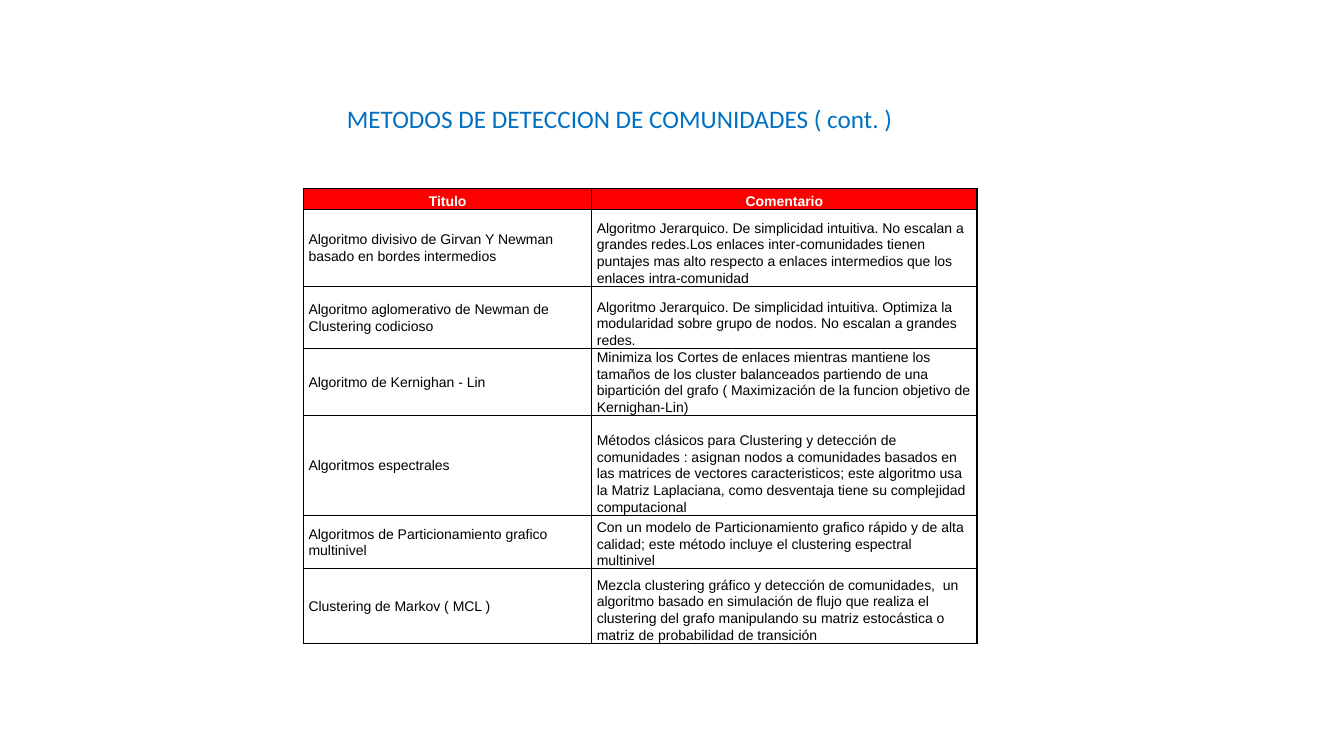
from dataclasses import dataclass

from lxml import etree
from pptx import Presentation
from pptx.dml.color import RGBColor
from pptx.enum.text import MSO_ANCHOR, MSO_AUTO_SIZE, PP_ALIGN
from pptx.oxml.ns import qn
from pptx.util import Inches, Pt

LEFT, CENTER = PP_ALIGN.LEFT, PP_ALIGN.CENTER
TOP, MIDDLE, BOTTOM = MSO_ANCHOR.TOP, MSO_ANCHOR.MIDDLE, MSO_ANCHOR.BOTTOM
NO_AUTOFIT = MSO_AUTO_SIZE.NONE
TITLE_ONLY = 5


@dataclass(frozen=True)
class Theme:
    title_font: str = "Calibri"
    body_font: str = "Arial"
    title_size: int = 18
    body_size: int = 10
    title: str = "0070C0"
    header: str = "FF0000"
    paper: str = "FFFFFF"
    ink: str = "000000"
    border_width: float = 1
    line_spacing: float = 1.07


THEME = Theme()
SLIDE_W, SLIDE_H = 13.33, 7.5
TITLE_BOX = (3.34, 0.97, 6.93, 0.4)
TABLE_LEFT, TABLE_TOP = 3.01, 1.87
COLUMNS = (2.86, 3.82)
ROWS = (0.21, 0.76, 0.62, 0.65, 0.99, 0.53, 0.74)
CELL_INSET = 0.05

TITLE = "METODOS DE DETECCION DE COMUNIDADES ( cont. )"
HEADERS = ("Titulo", "Comentario")
METHODS = (
    ("Algoritmo divisivo de Girvan Y Newman basado en bordes intermedios",
     "Algoritmo Jerarquico. De simplicidad intuitiva. No escalan a grandes "
     "redes.Los enlaces inter-comunidades tienen puntajes mas alto respecto a "
     "enlaces intermedios que los enlaces intra-comunidad"),
    ("Algoritmo aglomerativo de Newman de Clustering codicioso",
     "Algoritmo Jerarquico. De simplicidad intuitiva. Optimiza la modularidad "
     "sobre grupo de nodos. No escalan a grandes redes."),
    ("Algoritmo de Kernighan - Lin",
     "Minimiza los Cortes de enlaces mientras mantiene los tamaños de los "
     "cluster balanceados partiendo de una bipartición del grafo ( Maximización "
     "de la funcion objetivo de Kernighan-Lin)"),
    ("Algoritmos espectrales",
     "Métodos clásicos para Clustering y detección de comunidades : asignan "
     "nodos a comunidades basados en las matrices de vectores caracteristicos; "
     "este algoritmo usa la Matriz Laplaciana, como desventaja tiene su "
     "complejidad computacional"),
    ("Algoritmos de Particionamiento grafico multinivel",
     "Con un modelo de Particionamiento grafico rápido y de alta calidad; este "
     "método incluye el clustering espectral multinivel"),
    ("Clustering de Markov ( MCL )",
     "Mezcla clustering gráfico y detección de comunidades,  un algoritmo basado "
     "en simulación de flujo que realiza el clustering del grafo manipulando su "
     "matriz estocástica o matriz de probabilidad de transición"),
)


def write(tf, text, *, font=THEME.body_font, size=THEME.body_size,
          color=THEME.ink, bold=False, align=LEFT, spacing=THEME.line_spacing):
    p = tf.paragraphs[0]
    p.alignment = align
    p.line_spacing = spacing
    r = p.add_run()
    r.text = text
    r.font.name = font
    r.font.size = Pt(size)
    r.font.bold = bold
    r.font.color.rgb = RGBColor.from_string(color)


def add_title(s):
    sp = s.shapes.title
    sp.left, sp.top, sp.width, sp.height = map(Inches, TITLE_BOX)
    tf = sp.text_frame
    tf.word_wrap = True
    tf.auto_size = NO_AUTOFIT
    tf.vertical_anchor = TOP
    write(tf, TITLE, font=THEME.title_font, size=THEME.title_size,
          color=THEME.title, spacing=1.0)


def set_borders(cell):
    tc_pr = cell._tc.get_or_add_tcPr()
    for side in ("lnL", "lnR", "lnT", "lnB"):
        ln = etree.SubElement(tc_pr, qn(f"a:{side}"),
                              w=str(Pt(THEME.border_width)))
        fill = etree.SubElement(ln, qn("a:solidFill"))
        etree.SubElement(fill, qn("a:srgbClr"), val=THEME.ink)


def format_cell(cell, fill, anchor):
    cell.margin_left = cell.margin_right = Inches(CELL_INSET)
    cell.margin_top = cell.margin_bottom = 0
    cell.vertical_anchor = anchor
    set_borders(cell)
    cell.fill.solid()
    cell.fill.fore_color.rgb = RGBColor.from_string(fill)


def add_methods_table(s):
    frame = s.shapes.add_table(
        len(ROWS), len(COLUMNS), Inches(TABLE_LEFT), Inches(TABLE_TOP),
        Inches(sum(COLUMNS)), Inches(sum(ROWS)))
    table = frame.table
    table.first_row = table.horz_banding = False
    for column, width in zip(table.columns, COLUMNS):
        column.width = Inches(width)
    for row, height in zip(table.rows, ROWS):
        row.height = Inches(height)

    for col, header in enumerate(HEADERS):
        cell = table.cell(0, col)
        format_cell(cell, THEME.header, BOTTOM)
        write(cell.text_frame, header, color=THEME.paper, bold=True, align=CENTER)
    for row, method in enumerate(METHODS, start=1):
        for col, (text, anchor) in enumerate(zip(method, (MIDDLE, BOTTOM))):
            cell = table.cell(row, col)
            format_cell(cell, THEME.paper, anchor)
            write(cell.text_frame, text)


def main():
    prs = Presentation()
    prs.slide_width, prs.slide_height = Inches(SLIDE_W), Inches(SLIDE_H)
    s = prs.slides.add_slide(prs.slide_layouts[TITLE_ONLY])
    add_title(s)
    add_methods_table(s)
    prs.save("out.pptx")


if __name__ == "__main__":
    main()
